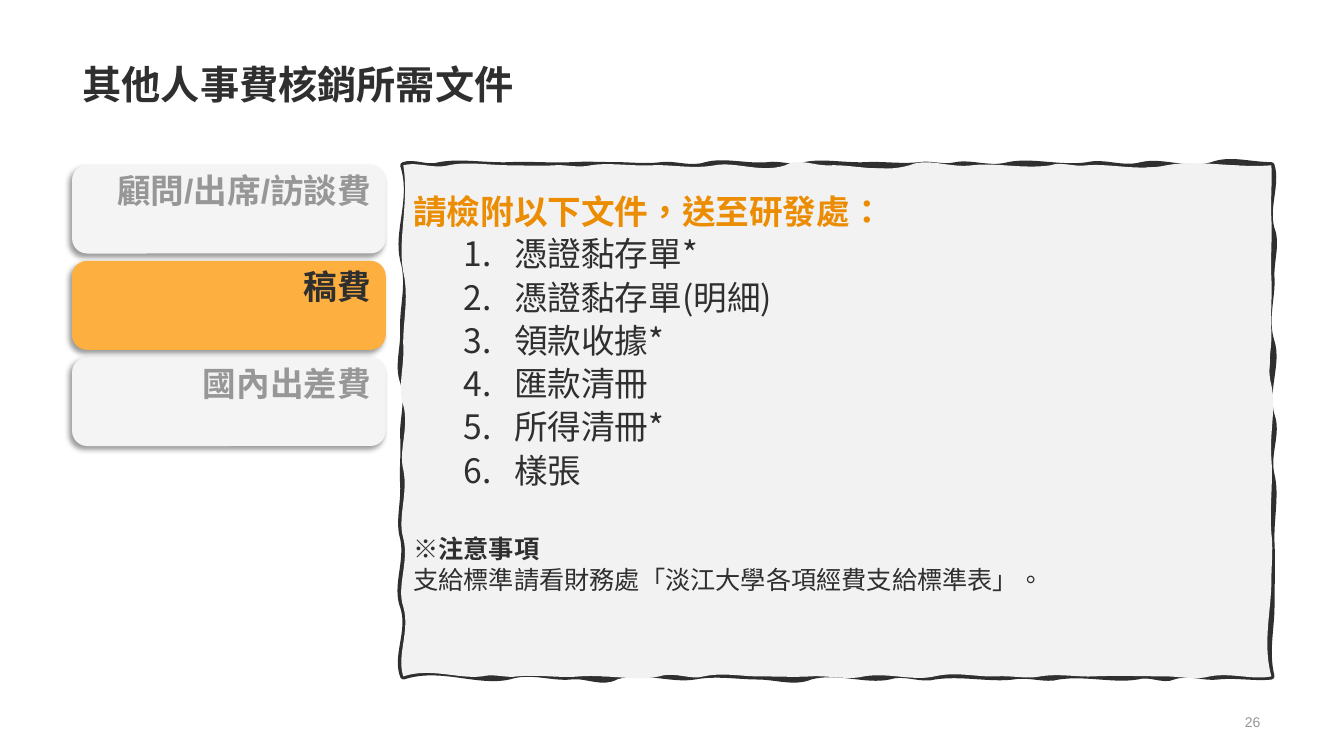
from lxml import etree
from pptx import Presentation
from pptx.dml.color import RGBColor
from pptx.enum import shapes, text
from pptx.oxml.ns import qn
from pptx.util import Inches, Pt

INK = RGBColor(0x2F, 0x2F, 0x2F)
GREY = RGBColor(0x97, 0x97, 0x97)
PALE = RGBColor(0xF4, 0xF4, 0xF4)
PANEL = RGBColor(0xF2, 0xF2, 0xF2)
AMBER = RGBColor(0xFD, 0xB0, 0x3F)
ORANGE = RGBColor(0xEB, 0x8C, 0x02)
SANS = "Arial"
CJK = "Noto Sans CJK SC"

LEFT, TOP, RIGHT, BOTTOM = 4, 1.64, 12.61, 6.71
TABS = ["顧問/出席/訪談費", "稿費", "國內出差費"]
ACTIVE = "稿費"
PAPERS = ["憑證黏存單*", "憑證黏存單(明細)", "領款收據*",
          "匯款清冊", "所得清冊*", "樣張"]

# Each edge (top, right, bottom, left) lists its knots and the swing at each.
STROKE = [
    [(4.36, .04), (5.06, .01), (5.68, .01), (6.12, 0), (6.56, .02), (7, .05),
     (7.62, .02), (7.98, .04), (8.59, .01), (9.12, .02), (9.48, .03), (10, .05),
     (10.79, .04), (11.32, .05), (12.02, .07), (RIGHT, 0)],
    [(2.27, -.06), (2.76, -.01), (3.39, -.07), (4.12, -.07), (4.71, -.05),
     (5.39, -.01), (6.02, 0), (BOTTOM, -.06)],
    [(12.08, -.02), (11.64, -.05), (11.28, -.04), (10.5, -.04), (10.05, -.03),
     (9.27, -.04), (8.82, -.05), (8.04, -.07), (7.51, 0), (6.89, -.04),
     (6.11, -.08), (5.66, -.02), (5.05, -.07), (LEFT, -.12)],
    [(6.02, .08), (5.34, .05), (4.81, .01), (4.33, .01), (3.79, .06),
     (3.26, .01), (2.58, .07), (TOP, .11)],
]
PAPER = [
    [(4.45, .04), (5.06, 0), (5.5, .01), (5.86, .03), (6.47, .01), (7.09, .04),
     (7.79, .08), (8.23, .01), (9.02, .08), (9.64, .03), (10.42, .04),
     (10.78, .02), (11.57, .06), (RIGHT, .03)],
    [(2.17, -.01), (2.76, -.01), (3.29, -.01), (3.82, -.05), (4.55, -.02),
     (5.29, -.02), (5.77, 0), (BOTTOM, -.09)],
    [(12, -.04), (11.55, 0), (10.85, -.01), (10.32, -.03), (9.88, -.01),
     (9.27, -.05), (8.57, -.04), (8.04, -.01), (7.51, 0), (6.98, -.04),
     (6.54, -.05), (5.75, -.02), (5.13, -.02), (4.78, -.03), (LEFT, -.09)],
    [(6.02, .07), (5.34, .06), (4.66, .05), (4.02, .06), (3.44, .01),
     (2.7, .06), (TOP, .06)],
]


def style(para, size, color, bold=False, name=SANS):
    font = para.font
    font.size, font.bold, font.name = Pt(size), bold, name
    font.color.rgb = color
    for run in para.runs:
        run._r.get_or_add_rPr().set("lang", "zh-TW")


def add_title(slide, words):
    title = slide.shapes.title
    title.left, title.top = Inches(0.72), Inches(0)
    title.width, title.height = Inches(11.88), Inches(1.12)
    frame = title.text_frame
    frame.text = words
    frame.auto_size = text.MSO_AUTO_SIZE.NONE
    frame.vertical_anchor = text.MSO_ANCHOR.BOTTOM
    para = frame.paragraphs[0]
    para.alignment = text.PP_ALIGN.LEFT
    para.line_spacing = 0.9
    style(para, 28, INK, True)


def add_shadow(shape):
    shape.shadow.inherit = False
    effects = shape._element.spPr.find(qn("a:effectLst"))
    outer = etree.SubElement(effects, qn("a:outerShdw"), blurRad=str(Pt(4)),
                             dist=str(Pt(3)), dir=str(135 * 60000), rotWithShape="0")
    color = etree.SubElement(outer, qn("a:srgbClr"), val="000000")
    etree.SubElement(color, qn("a:alpha"), val="40000")


def add_tab(slide, row, words):
    active = words == ACTIVE
    tab = slide.shapes.add_shape(
        shapes.MSO_SHAPE.ROUNDED_RECTANGLE, Inches(0.72),
        Inches(TOP + 0.955 * row), Inches(3.1), Inches(0.87))
    fill = AMBER if active else PALE
    tab.fill.solid()
    tab.fill.fore_color.rgb = fill
    tab.line.color.rgb = fill
    tab.line.width = Pt(1 if active else 0.75)
    add_shadow(tab)
    frame = tab.text_frame
    frame.text = words
    frame.word_wrap = True
    frame.vertical_anchor = text.MSO_ANCHOR.TOP
    para = frame.paragraphs[0]
    para.alignment = text.PP_ALIGN.RIGHT
    para.line_spacing = 0.9
    style(para, 24, INK if active else GREY, True)


def draw_edges(path, edges):
    """Fill a path with smooth curves that swing to both sides of each edge."""
    def add(kind, *points):
        step = etree.SubElement(path, qn(kind))
        for x, y in points:
            etree.SubElement(step, qn("a:pt"), x=str(Inches(x - LEFT)),
                             y=str(Inches(y - TOP)))

    add("a:moveTo", (LEFT, TOP))
    sides = [(LEFT, TOP), (TOP, RIGHT), (RIGHT, BOTTOM), (BOTTOM, LEFT)]
    for side, ((start, level), knots) in enumerate(zip(sides, edges)):
        last = knots[0][1]
        for knot, swing in knots:
            gap = knot - start
            points = [(start + 0.3 * gap, level - last),
                      (start + 0.65 * gap, level + swing), (knot, level)]
            if side % 2:
                points = [(x, y) for y, x in points]
            add("a:cubicBezTo", *points)
            start, last = knot, swing
    etree.SubElement(path, qn("a:close"))


def add_panel(slide):
    build = slide.shapes.build_freeform(Inches(LEFT), Inches(TOP))
    corners = [(RIGHT, TOP), (RIGHT, BOTTOM), (LEFT, BOTTOM)]
    build.add_line_segments([(Inches(x), Inches(y)) for x, y in corners])
    panel = build.convert_to_shape()
    panel.shadow.inherit = False
    panel.fill.solid()
    panel.fill.fore_color.rgb = PANEL
    panel.line.color.rgb = INK
    panel.line.width = Pt(4.5)
    paths = panel._element.spPr.find(".//" + qn("a:pathLst"))
    size = dict(paths[0].attrib)
    paths.remove(paths[0])
    for edges, part in ((STROKE, {"fill": "none"}), (PAPER, {"stroke": "0"})):
        draw_edges(etree.SubElement(paths, qn("a:path"), {**size, **part}), edges)
    return panel


def add_para(frame, words, number=False, before=0, spacing=1.0):
    first = frame.paragraphs[0]
    para = frame.add_paragraph() if first.text else first
    para.text = words
    para.alignment = text.PP_ALIGN.LEFT
    para.space_before = Pt(before)
    para.line_spacing = spacing
    if number:
        props = para._p.get_or_add_pPr()
        props.set("marL", str(Inches(1)))
        props.set("indent", str(Inches(-0.5)))
        etree.SubElement(props, qn("a:buFont"), typeface=CJK)
        etree.SubElement(props, qn("a:buAutoNum"), type="arabicPeriod")
    return para


def add_list(panel):
    frame = panel.text_frame
    frame.word_wrap = True
    frame.vertical_anchor = text.MSO_ANCHOR.TOP
    head = add_para(frame, "請檢附以下文件，送至研發處：", spacing=1.5)
    style(head, 24, ORANGE, True, CJK)
    for words in PAPERS:
        style(add_para(frame, words, True, 5, 0.9), 24, INK, name=CJK)
    style(add_para(frame, "※注意事項", before=31), 18, INK, True)
    note = "支給標準請看財務處「淡江大學各項經費支給標準表」。"
    style(add_para(frame, note), 18, INK)


def add_page(slide, number):
    box = slide.shapes.add_textbox(Inches(9.69), Inches(7.04), Inches(2.91), Inches(0.24))
    frame = box.text_frame
    frame.text = number
    frame.word_wrap = True
    frame.vertical_anchor = text.MSO_ANCHOR.MIDDLE
    para = frame.paragraphs[0]
    para.alignment = text.PP_ALIGN.RIGHT
    style(para, 10, GREY)


def main():
    deck = Presentation()
    deck.slide_width, deck.slide_height = Inches(13.33), Inches(7.5)
    slide = deck.slides.add_slide(deck.slide_layouts[5])
    add_title(slide, "其他人事費核銷所需文件")
    add_page(slide, "26")
    for row, words in enumerate(TABS):
        add_tab(slide, row, words)
    add_list(add_panel(slide))
    deck.save("out.pptx")


if __name__ == "__main__":
    main()
